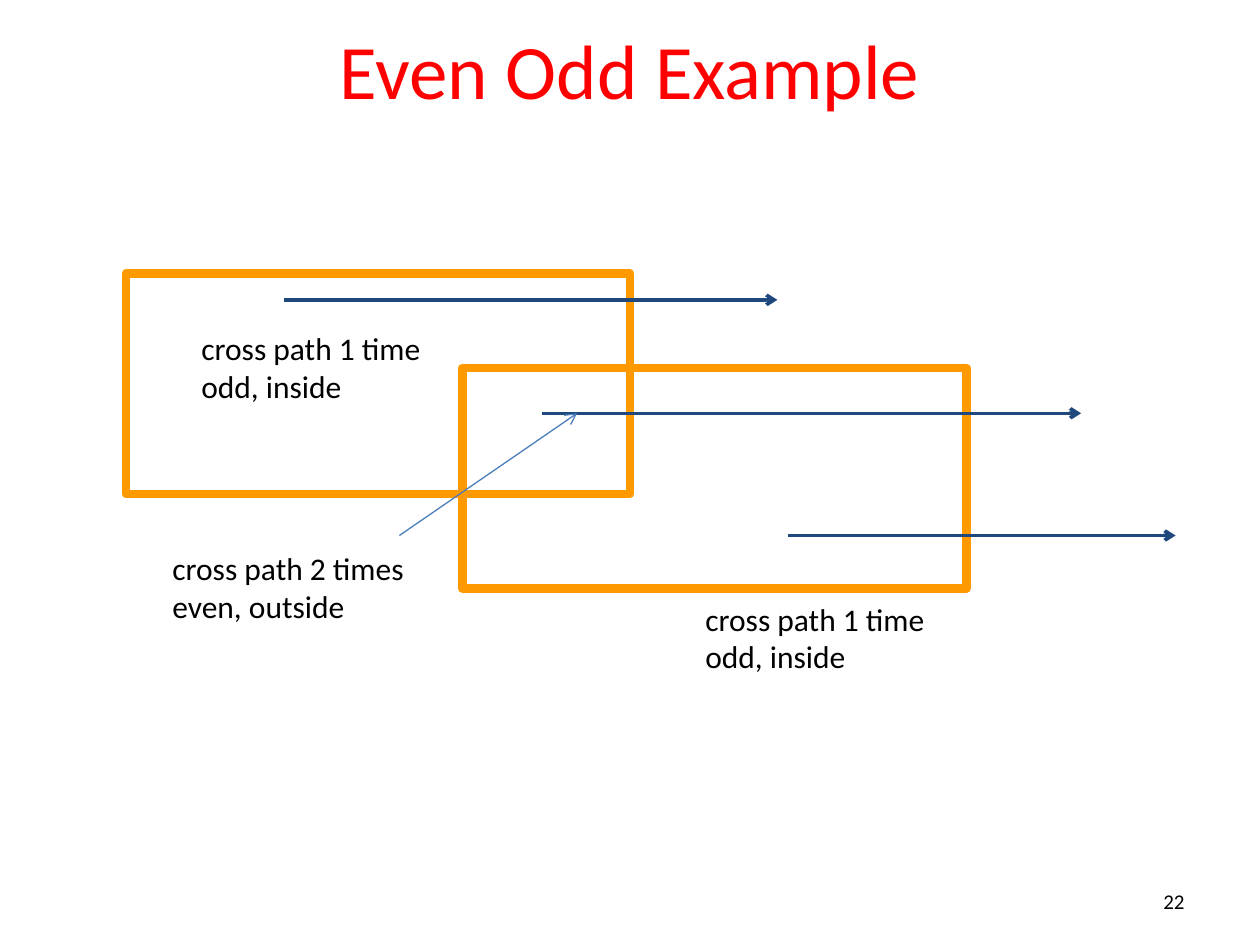
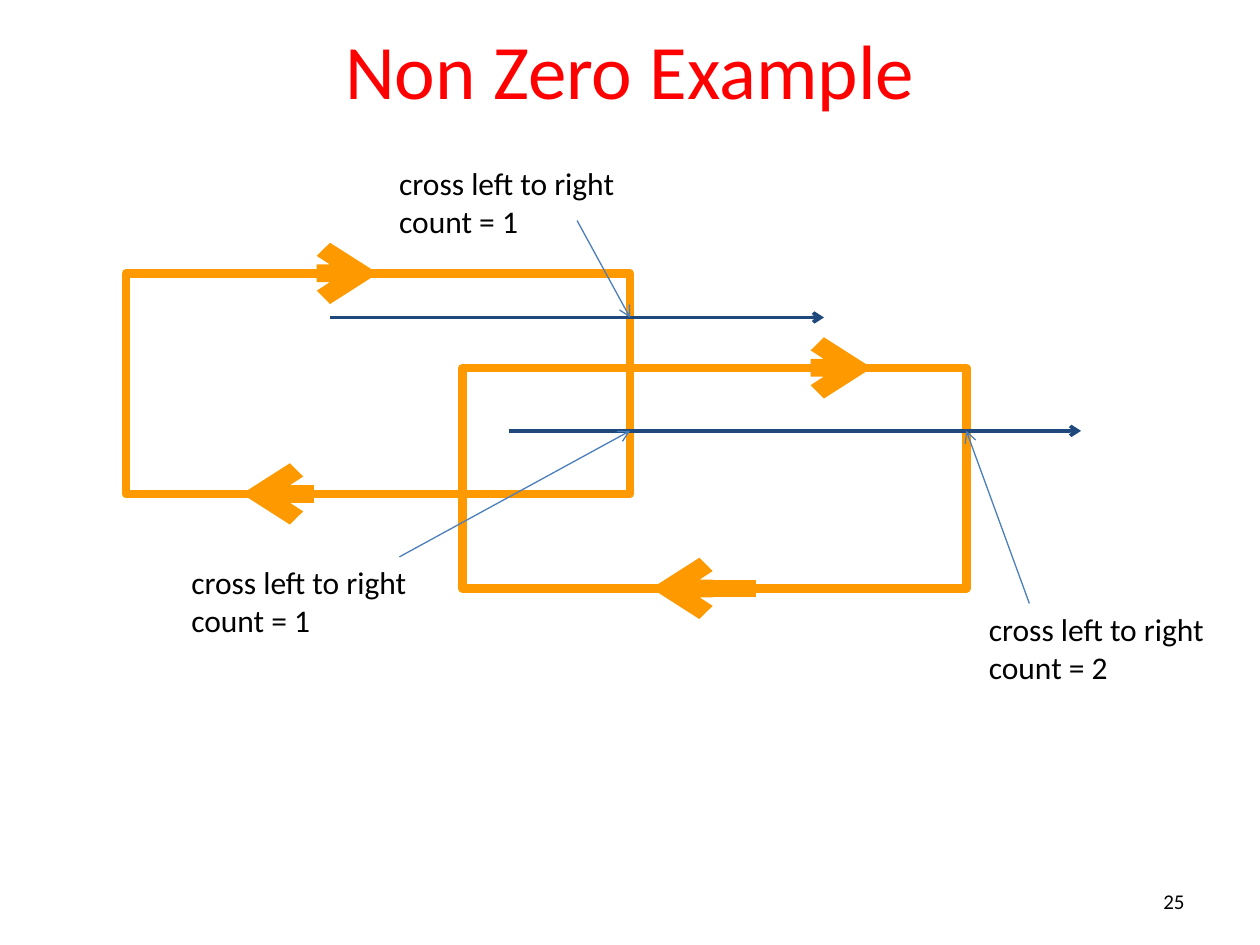
"""Build two slides on the even-odd and non-zero fill rules."""
from lxml.etree import SubElement
from pptx import Presentation
from pptx.dml.color import RGBColor
from pptx.enum.shapes import MSO_CONNECTOR as Link, MSO_SHAPE as Shape
from pptx.enum.text import MSO_ANCHOR as Anchor, PP_ALIGN as Align
from pptx.oxml.ns import qn
from pptx.util import Inches, Pt

RED = RGBColor(0xFF, 0x00, 0x00)
BLACK = RGBColor(0x00, 0x00, 0x00)
ORANGE = RGBColor(0xFF, 0x99, 0x00)
NAVY = RGBColor(0x1F, 0x49, 0x7D)
BLUE = RGBColor(0x4B, 0x7E, 0xBC)
FONT = "Calibri"

WIDE, HIGH = 10, 7.5
BOX_W, BOX_H = 4, 1.75
LEFT, TOP = 1, 2.17
LEFT2, TOP2 = LEFT + 2.67, TOP + 0.75
RIGHT, RIGHT2 = LEFT + BOX_W, LEFT2 + BOX_W
BASE, BASE2 = TOP + BOX_H, TOP2 + BOX_H
BOXES = [(LEFT, TOP), (LEFT2, TOP2)]

STYLES = {"turns": (ORANGE, 10), "rays": (NAVY, 2), "hints": (BLUE, 0.75)}

SLIDES = [
    {
        "title": "Even Odd Example",
        "page": "22",
        "rays": [(2.25, 2.38, 6.17, 2.38), (4.3, 3.28, 8.58, 3.28),
                 (6.25, 4.25, 9.33, 4.25)],
        "hints": [(3.17, 4.25, 4.58, 3.28)],
        "notes": [(1.5, 2.56, 1.96, "cross path 1 time\nodd, inside"),
                  (1.27, 4.31, 2.06, "cross path 2 times\neven, outside"),
                  (5.5, 4.71, 1.96, "cross path 1 time\nodd, inside")],
    },
    {
        "title": "Non Zero Example",
        "page": "25",
        "turns": [(2.67, TOP, 3, TOP), (6.58, TOP2, 6.92, TOP2),
                  (2.49, BASE, 1.92, BASE), (6, BASE2, 5.17, BASE2)],
        "rays": [(2.62, 2.52, 6.54, 2.52), (4.04, 3.42, 8.58, 3.42)],
        "hints": [(4.58, 1.75, RIGHT, 2.52), (3.17, 4.42, RIGHT, 3.42),
                  (8.17, 4.79, RIGHT2, 3.42)],
        "notes": [(3.07, 1.25, 1.93, "cross left to right\ncount = 1"),
                  (1.42, 4.42, 1.93, "cross left to right\ncount = 1"),
                  (7.75, 4.79, 1.93, "cross left to right\ncount = 2")],
    },
]


def write(frame, text, size, color, align, anchor=Anchor.MIDDLE):
    frame.text = text
    frame.vertical_anchor = anchor
    for para in frame.paragraphs:
        para.alignment = align
        para.font.name, para.font.size = FONT, Pt(size)
        para.font.color.rgb = color


def add_title(slide, text):
    title = slide.shapes.title
    title.left, title.top = Inches(0.5), Inches(-0.08)
    title.width, title.height = Inches(WIDE - 1), Inches(1.25)
    write(title.text_frame, text, 44, RED, Align.CENTER)


def add_text(slide, x, y, w, h, wrap, *style):
    frame = slide.shapes.add_textbox(*map(Inches, (x, y, w, h))).text_frame
    frame.word_wrap = wrap
    write(frame, *style)


def stroke(shape, color, width):
    shape.line.color.rgb = color
    shape.line.width = Pt(width)


def add_box(slide, x, y):
    box = slide.shapes.add_shape(
        Shape.RECTANGLE, *map(Inches, (x, y, BOX_W, BOX_H)))
    box.shadow.inherit = False
    box.fill.background()
    stroke(box, ORANGE, 5)
    SubElement(box.line._get_or_add_ln(), qn("a:round"))


def add_arrow(slide, ends, color, width):
    arrow = slide.shapes.add_connector(Link.STRAIGHT, *map(Inches, ends))
    stroke(arrow, color, width)
    SubElement(arrow.line._get_or_add_ln(), qn("a:tailEnd"), type="arrow")
    SubElement(arrow._element.spPr, qn("a:effectLst"))


def main():
    deck = Presentation()
    deck.slide_width, deck.slide_height = Inches(WIDE), Inches(HIGH)
    for data in SLIDES:
        slide = deck.slides.add_slide(deck.slide_layouts[5])
        add_title(slide, data["title"])
        add_text(slide, 7.17, 6.95, 2.33, 0.4, True,
                 data["page"], 12, BLACK, Align.RIGHT)
        for spot in BOXES:
            add_box(slide, *spot)
        for kind, style in STYLES.items():
            for ends in data.get(kind, []):
                add_arrow(slide, ends, *style)
        for x, y, w, text in data["notes"]:
            add_text(slide, x, y, w, 0.71, False,
                     text, 18, BLACK, Align.LEFT, Anchor.TOP)
    deck.save("out.pptx")


if __name__ == "__main__":
    main()
